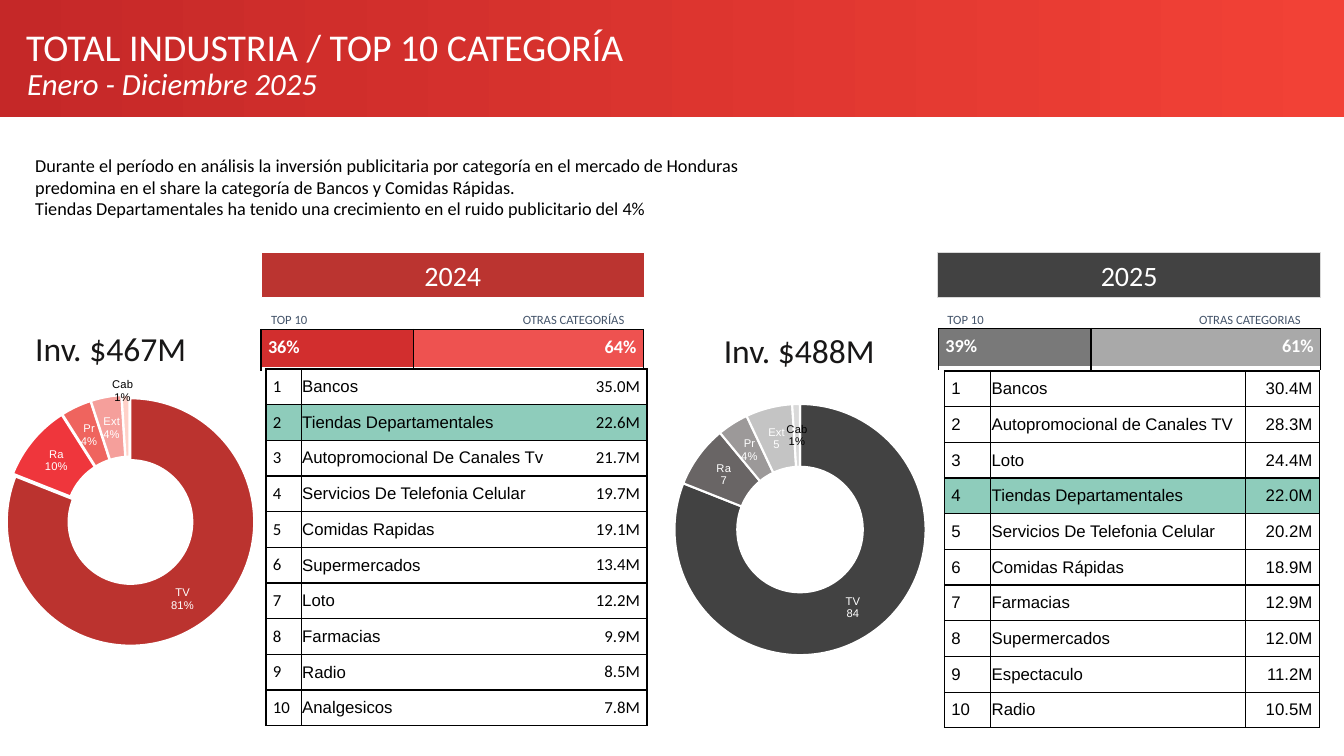
from pptx import Presentation
from pptx.chart.data import CategoryChartData
from pptx.dml.color import RGBColor
from pptx.enum.chart import XL_CHART_TYPE
from pptx.enum.shapes import MSO_SHAPE
from pptx.enum.text import MSO_ANCHOR, PP_ALIGN
from pptx.oxml import parse_xml
from pptx.oxml.ns import nsdecls
from pptx.util import Pt

RING = XL_CHART_TYPE.DOUGHNUT
RECT, ROUND = MSO_SHAPE.RECTANGLE, MSO_SHAPE.ROUNDED_RECTANGLE
TOP, MIDDLE = MSO_ANCHOR.TOP, MSO_ANCHOR.MIDDLE
LEFT, CENTER, RIGHT = PP_ALIGN.LEFT, PP_ALIGN.CENTER, PP_ALIGN.RIGHT

WHITE = RGBColor(0xFF, 0xFF, 0xFF)
BLACK = RGBColor(0, 0, 0)
INK = RGBColor(0x18, 0x17, 0x17)
SLATE = RGBColor(0x44, 0x54, 0x6A)
MINT = RGBColor(0x8E, 0xCC, 0xBB)
SILVER = RGBColor(0xD9, 0xD9, 0xD9)
BRICK = RGBColor(0xBB, 0x34, 0x30)
COAL = RGBColor(0x42, 0x42, 0x42)
BANNER = [RGBColor(0xC5, 0x28, 0x28), RGBColor(0xF2, 0x41, 0x36)]
RED_BAR = [RGBColor(0xD2, 0x2E, 0x2E), RGBColor(0xEE, 0x52, 0x50)]
GRAY_BAR = [RGBColor(0x79, 0x79, 0x79), RGBColor(0xA9, 0xA9, 0xA9)]
REDS = [RGBColor(0xBB, 0x33, 0x2F), RGBColor(0xEF, 0x36, 0x3C), RGBColor(0xEF, 0x64, 0x5E),
        RGBColor(0xF5, 0x9F, 0x9B), RGBColor(0xFF, 0xD1, 0xC8)]
GRAYS = [COAL, RGBColor(0x69, 0x65, 0x65), RGBColor(0x9C, 0x99, 0x99),
         RGBColor(0xC4, 0xC4, 0xC4), SILVER]

MEDIA = ["TV", "Ra", "Pr", "Ext", "Cab"]
RANK_24 = [("Bancos", "35.0M"), ("Tiendas Departamentales", "22.6M"),
           ("Autopromocional De Canales Tv", "21.7M"),
           ("Servicios De Telefonia Celular", "19.7M"), ("Comidas Rapidas", "19.1M"),
           ("Supermercados", "13.4M"), ("Loto", "12.2M"), ("Farmacias", "9.9M"),
           ("Radio", "8.5M"), ("Analgesicos", "7.8M")]
RANK_25 = [("Bancos", "30.4M"), ("Autopromocional de Canales TV", "28.3M"),
           ("Loto", "24.4M"), ("Tiendas Departamentales", "22.0M"),
           ("Servicios De Telefonia Celular", "20.2M"), ("Comidas Rápidas", "18.9M"),
           ("Farmacias", "12.9M"), ("Supermercados", "12.0M"),
           ("Espectaculo", "11.2M"), ("Radio", "10.5M")]


def write(frame, text, size=12, color=BLACK, font="Calibri", bold=False,
          italic=False, align=LEFT):
    frame.text = text
    for para in frame.paragraphs:
        para.alignment = align
        for run in para.runs:
            face = run.font
            face.name, face.size, face.bold, face.italic = font, Pt(size), bold, italic
            face.color.rgb = color


def inset(frame):
    frame.margin_left = frame.margin_right = Pt(3.6)
    frame.margin_top = frame.margin_bottom = Pt(3.6)


def label(slide, text, x, y, w, h, wrap=True, **style):
    box = slide.shapes.add_textbox(Pt(x), Pt(y), Pt(w), Pt(h))
    inset(box.text_frame)
    box.text_frame.word_wrap = wrap
    write(box.text_frame, text, **style)


def block(slide, kind, x, y, w, h):
    shape = slide.shapes.add_shape(kind, Pt(x), Pt(y), Pt(w), Pt(h))
    shape.shadow.inherit = False
    return shape


def edge(side, color, width):
    body = (f'<a:solidFill><a:srgbClr val="{color}"/></a:solidFill>'
            if color is not None else "<a:noFill/>")
    return parse_xml(f'<a:{side} {nsdecls("a")} w="{Pt(width)}">{body}</a:{side}>')


def fill_cell(cell, text, fill, pad, sides, anchor=MIDDLE, **style):
    """sides: (colour, width) of the left, right, top and bottom borders."""
    cell.margin_left = cell.margin_right = Pt(pad)
    cell.margin_top = cell.margin_bottom = Pt(pad)
    cell.vertical_anchor = anchor
    cell.fill.solid()
    cell.fill.fore_color.rgb = fill
    write(cell.text_frame, text, **style)
    props = cell._tc.get_or_add_tcPr()
    for at, (side, line) in enumerate(zip(("lnL", "lnR", "lnT", "lnB"), sides)):
        props.insert(at, edge(side, *line))


def grid(slide, x, y, widths, rows, height):
    frame = slide.shapes.add_table(rows, len(widths), Pt(x), Pt(y),
                                   Pt(sum(widths)), Pt(height * rows))
    table = frame.table
    table.first_row = table.horz_banding = False
    for col, width in zip(table.columns, widths):
        col.width = Pt(width)
    for row in table.rows:
        row.height = Pt(height)
    return table


def share(slide, x, y, texts, colors):
    table = grid(slide, x, y, [109, 164], 1, 28)
    thin = (BLACK, 1)
    for col, align in enumerate((LEFT, RIGHT)):
        fill_cell(table.cell(0, col), texts[col], colors[col], 5,
                  [thin, thin, thin, (WHITE, 3)], anchor=TOP,
                  size=13, color=WHITE, bold=True, align=align)


def ranking(slide, x, y, widths, items, mark, font, split):
    """split: draw the line between the names and the amounts."""
    table = grid(slide, x, y, widths, len(items), 25.5)
    thin, none = (BLACK, 1), (None, 0)
    inner = thin if split else none
    for row, (name, amount) in enumerate(items):
        color = MINT if row == mark else WHITE
        parts = [(str(row + 1), 5, font, LEFT, thin, thin),
                 (name, 0.7, "Arial", LEFT, thin, inner),
                 (amount, 5, font, RIGHT, inner, thin)]
        for col, (text, pad, face, align, left, right) in enumerate(parts):
            fill_cell(table.cell(row, col), text, color, pad,
                      [left, right, thin, thin], font=face, align=align)


def layout(values):
    """values: pairs of layout element and value."""
    body = "".join(f'<c:{key} val="{val}"/>' for key, val in values)
    return parse_xml(f'<c:layout {nsdecls("c")}><c:manualLayout>{body}'
                     '</c:manualLayout></c:layout>')


def donut(slide, x, y, values, colors, custom, burst=0, shift=None):
    data = CategoryChartData(number_format="0")
    data.categories = MEDIA
    data.add_series("Series 1", values)
    chart = slide.shapes.add_chart(RING, Pt(x), Pt(y), Pt(273), Pt(201.6), data).chart
    chart.has_legend = chart.has_title = False
    chart.font.name, chart.font.size = "Arial", Pt(10)
    chart.font.color.rgb = BLACK
    chart.plots[0].vary_by_categories = True
    series = chart.plots[0].series[0]

    # Slices
    for at, color in enumerate(colors):
        form = series.points[at].format
        form.fill.solid()
        form.fill.fore_color.rgb = color
        form.line.color.rgb = WHITE
        form.line.width = Pt(1.5)
    if burst:
        series._element.xpath("c:dPt")[0].addprevious(
            parse_xml(f'<c:explosion {nsdecls("c")} val="{burst}"/>'))

    # Labels
    tags = series.data_labels
    tags.number_format, tags.number_format_is_linked = "0%", False
    tags.font.name, tags.font.size = "Arial", Pt(8)
    tags.font.color.rgb = WHITE
    for at, text in custom.items():
        write(series.points[at].data_label.text_frame, text, size=8,
              color=WHITE, font="Arial", align=CENTER)
    last = series.points[len(MEDIA) - 1].data_label.font
    last.name, last.size = "Arial", Pt(8)
    last.color.rgb = BLACK
    root = tags._element
    for key, val in (("showVal", 0), ("showCatName", 1), ("showPercent", 1)):
        for flag in root.xpath(f".//c:{key}"):
            flag.set("val", str(val))
    for flag in root.xpath(".//c:showBubbleSize"):
        flag.addnext(parse_xml(f'<c:separator {nsdecls("c")}>\n</c:separator>'))
    if shift:
        root.xpath(f"c:dLbl/c:idx[@val='{len(MEDIA) - 1}']")[0].addnext(
            layout(zip("xy", shift)))

    # Plot area
    area = chart._chartSpace.xpath(".//c:plotArea")[0]
    for old in area.xpath("c:layout"):
        area.remove(old)
    area.insert(0, layout([("layoutTarget", "inner"), ("xMode", "edge"), ("yMode", "edge"),
                           ("x", 0.17), ("y", 0.06), ("w", 0.66), ("h", 0.89)]))


def panel(slide, x, year, color, line, other):
    head = block(slide, RECT, x, 180.7, 274, 31.7)
    head.fill.solid()
    head.fill.fore_color.rgb = color
    head.line.color.rgb = line
    head.line.width = Pt(0.75)
    inset(head.text_frame)
    write(head.text_frame, year, size=20, color=WHITE, align=CENTER)
    label(slide, "TOP 10", x + 3.6, 219.6, 78, 16.6, size=9, color=SLATE)
    label(slide, other, x + 150, 219.6, 113, 16.6, size=9, color=SLATE, align=RIGHT)


def banner(slide):
    bar = block(slide, ROUND, 0, 0, 960, 83.5)
    bar.adjustments[0] = 0
    bar.line.fill.background()
    bar.fill.gradient()
    bar.fill.gradient_angle = 0
    for stop, color in zip(bar.fill.gradient_stops, BANNER):
        stop.color.rgb = color
    title = slide.shapes.title
    title.left, title.top, title.width, title.height = Pt(15), Pt(13), Pt(454), Pt(34)
    frame = title.text_frame
    inset(frame)
    frame.word_wrap, frame.vertical_anchor = False, TOP
    write(frame, "TOTAL INDUSTRIA / TOP 10 CATEGORÍA", size=27, color=WHITE)
    bar._element.addnext(title._element)
    label(slide, "Enero - Diciembre 2025", 15.8, 42.5, 216, 34, wrap=False,
          size=22, color=WHITE, italic=True)


def main():
    deck = Presentation()
    deck.slide_width, deck.slide_height = Pt(960), Pt(540)
    slide = deck.slides.add_slide(deck.slide_layouts[5])
    banner(slide)
    label(slide, "Durante el período en análisis la inversión publicitaria por categoría "
          "en el mercado de Honduras predomina en el share la categoría de Bancos y "
          "Comidas Rápidas.\nTiendas Departamentales ha tenido una crecimiento en el "
          "ruido publicitario del 4%", 21.6, 106.5, 559, 55, size=13)

    # Year 2024
    panel(slide, 186.5, "2024", BRICK, WHITE, "OTRAS CATEGORÍAS")
    share(slide, 186.5, 235.4, ["36%", "64%"], RED_BAR)
    ranking(slide, 190, 263.5, [25.2, 197.3, 49.7], RANK_24, 1, "Calibri", False)
    label(slide, "Inv. $467M", 21.6, 231, 116, 36, wrap=False, size=24, color=INK)
    donut(slide, -44, 270, [81, 10, 4, 4, 1], REDS, {}, burst=3, shift=(-0.01, -0.13))

    # Year 2025
    panel(slide, 669.6, "2025", COAL, SILVER, "OTRAS CATEGORIAS")
    share(slide, 670.3, 234.7, ["39%", "61%"], GRAY_BAR)
    ranking(slide, 674.6, 265, [33.1, 182.2, 52.6], RANK_25, 3, "Arial", True)
    label(slide, "Inv. $488M", 513.4, 231.8, 116, 36, wrap=False, size=24, color=INK)
    donut(slide, 435, 276.5, [81, 8, 4, 6, 1], GRAYS,
          {0: "TV\n84", 1: "Ra\n7", 3: "Ext\n5"})

    deck.save("out.pptx")


if __name__ == "__main__":
    main()
